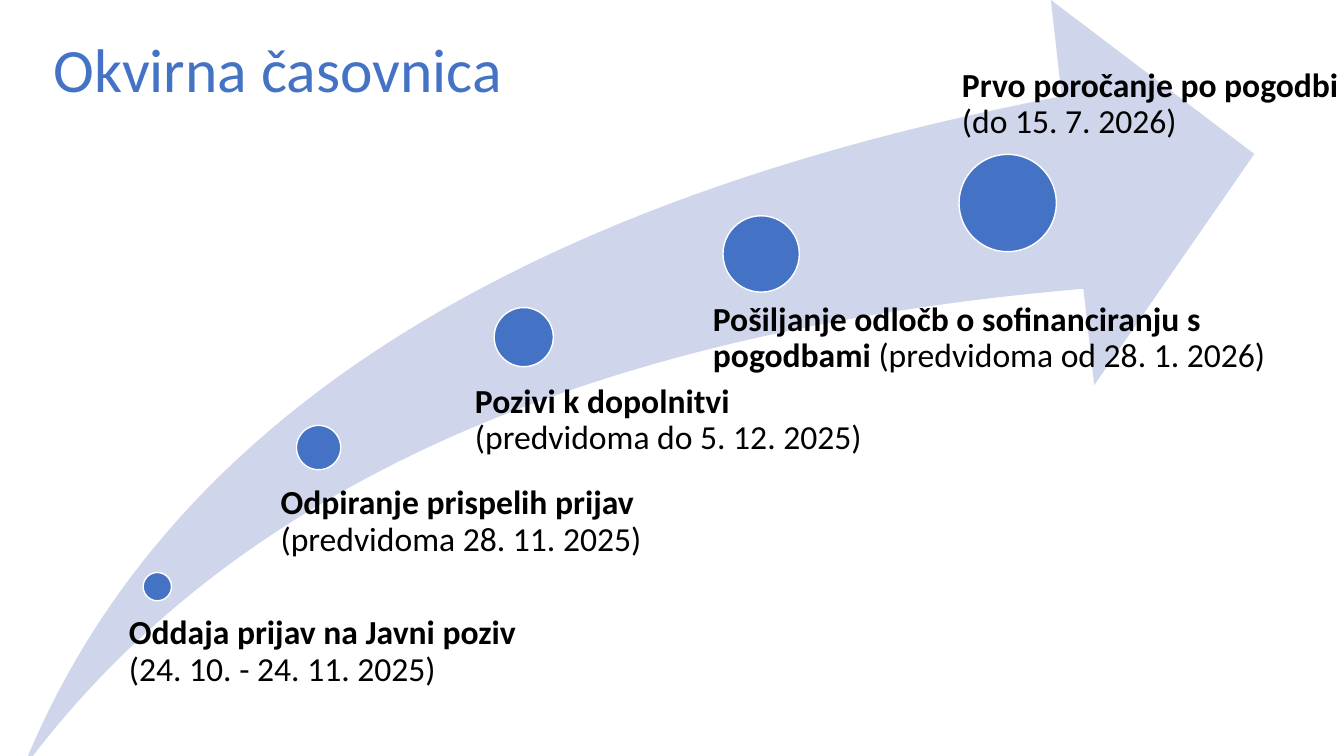
"""Build the timeline slide: a rising arrow with five dated milestones."""
from pptx import Presentation
from pptx.dml.color import RGBColor
from pptx.enum.shapes import MSO_SHAPE
from pptx.enum.text import MSO_AUTO_SIZE
from pptx.util import Inches, Pt

ARROW, DOT = MSO_SHAPE.SWOOSH_ARROW, MSO_SHAPE.OVAL
GROW = MSO_AUTO_SIZE.SHAPE_TO_FIT_TEXT
FONT = "Calibri"
BLUE, PALE, WHITE, BLACK = "4472C4", "CFD5EA", "FFFFFF", "000000"
SLIDE_W, SLIDE_H = 13.33, 7.5

TITLE = "Okvirna časovnica"
TITLE_BOX = (0.43, 0.26, 4.82, 0.84)
ARROW_BOX = (0.22, 0, 12.22, 7.64)
INSET_PER_DOT = 0.53

# Percent of the arrow: dot centre, dot diameter (of width), label box
MILESTONES = [
    ("Oddaja prijav na Javni poziv", "(24. 10. - 24. 11. 2025)", True,
     (10.97, 76.18), 2.3, (7.45, 79.97, 39.77, 15.45)),
    ("Odpiranje prispelih prijav", "(predvidoma 28. 11. 2025)", True,
     (24.06, 58.12), 3.6, (19.07, 63.09, 34.78, 32.2)),
    ("Pozivi k dopolnitvi", "(predvidoma do 5. 12. 2025)", True,
     (40.71, 43.78), 4.8, (34.21, 49.87, 45.17, 41.23)),
    ("Pošiljanje odločb o sofinanciranju s pogodbami ",
     "(predvidoma od 28. 1. 2026)", False,
     (59.98, 32.98), 6.2, (52.78, 39.27, 53.36, 54.45)),
    ("Prvo poročanje po pogodbi", "(do 15. 7. 2026)", True,
     (79.99, 26.37), 7.9, (72.09, 8.9, 35.84, 64.92)),
]


def color(value):
    return RGBColor.from_string(value)


def on_arrow(x, y):
    left, top, width, height = ARROW_BOX
    return left + width * x / 100, top + height * y / 100


def add_solid(slide, kind, box, fill, outline=None):
    solid = slide.shapes.add_shape(kind, *map(Inches, box))
    solid.shadow.inherit = False
    solid.fill.solid()
    solid.fill.fore_color.rgb = color(fill)
    if outline:
        solid.line.color.rgb = color(outline)
        solid.line.width = Pt(1)
    else:
        solid.line.fill.background()
    return solid


def style(paragraph, size, ink):
    paragraph.font.name = FONT
    paragraph.font.size = Pt(size)
    paragraph.font.color.rgb = color(ink)


def add_label(slide, box, inset, step, date, date_below):
    frame = slide.shapes.add_textbox(*map(Inches, box)).text_frame
    frame.word_wrap = True
    frame.margin_left = Inches(inset)
    frame.margin_top = frame.margin_right = frame.margin_bottom = 0
    label = frame.paragraphs[0]
    label.line_spacing = 0.9
    style(label, 24, BLACK)
    heading = label.add_run()
    heading.text = step
    heading.font.bold = True
    if date_below:
        label.add_line_break()
    label.add_run().text = date


def add_milestone(slide, step, date, date_below, centre, share, label_share):
    diameter = ARROW_BOX[2] * share / 100
    x, y = on_arrow(*centre)
    dot_box = (x - diameter / 2, y - diameter / 2, diameter, diameter)
    add_solid(slide, DOT, dot_box, BLUE, WHITE)
    left, top, width, height = label_share
    label_box = (*on_arrow(left, top), ARROW_BOX[2] * width / 100,
                 ARROW_BOX[3] * height / 100)
    add_label(slide, label_box, diameter * INSET_PER_DOT,
              step, date, date_below)


def add_title(slide):
    frame = slide.shapes.add_textbox(*map(Inches, TITLE_BOX)).text_frame
    frame.word_wrap = False
    frame.auto_size = GROW
    heading = frame.paragraphs[0]
    heading.text = TITLE
    style(heading, 44, BLUE)


def main():
    deck = Presentation()
    deck.slide_width, deck.slide_height = Inches(SLIDE_W), Inches(SLIDE_H)
    slide = deck.slides.add_slide(deck.slide_layouts[6])
    arrow = add_solid(slide, ARROW, ARROW_BOX, PALE)
    arrow.adjustments[0] = arrow.adjustments[1] = 0.25
    for milestone in MILESTONES:
        add_milestone(slide, *milestone)
    add_title(slide)
    deck.save("out.pptx")


if __name__ == "__main__":
    main()
